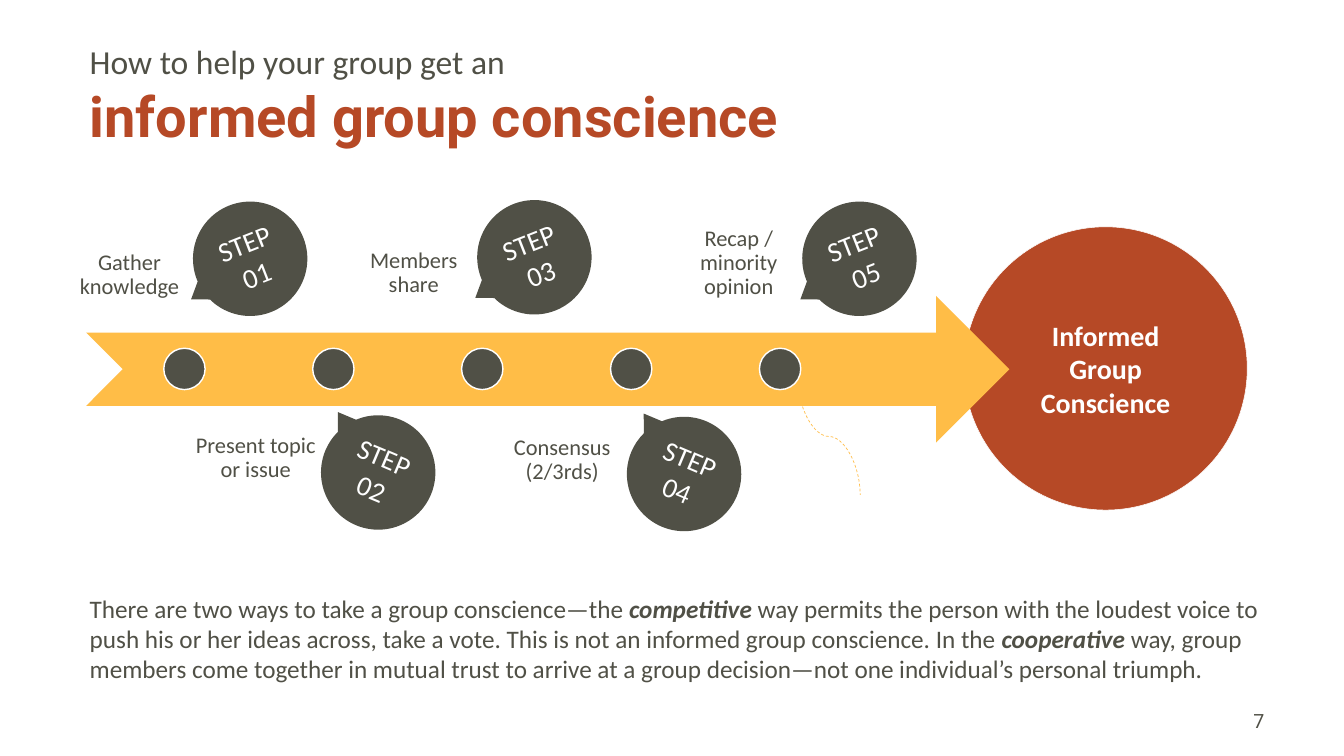
from pptx import Presentation
from pptx.dml.color import RGBColor
from pptx.enum.dml import MSO_LINE
from pptx.enum.shapes import MSO_CONNECTOR, MSO_SHAPE
from pptx.enum.text import MSO_ANCHOR, MSO_AUTO_SIZE, PP_ALIGN
from pptx.oxml.ns import qn
from pptx.util import Inches, Pt
from lxml import etree

OVAL, ARROW = MSO_SHAPE.OVAL, MSO_SHAPE.NOTCHED_RIGHT_ARROW
CALLOUT, CURVE = MSO_SHAPE.OVAL_CALLOUT, MSO_CONNECTOR.CURVE
TOP, MIDDLE, BOTTOM = MSO_ANCHOR.TOP, MSO_ANCHOR.MIDDLE, MSO_ANCHOR.BOTTOM
LEFT, CENTER, RIGHT = PP_ALIGN.LEFT, PP_ALIGN.CENTER, PP_ALIGN.RIGHT
NO_FIT, DASH = MSO_AUTO_SIZE.NONE, MSO_LINE.DASH

COLORS = {"rust": "B64926", "amber": "FFBD47", "olive": "505046", "white": "FFFFFF"}

STEPS = [
    ("STEP 01", ["Gather", "knowledge"], (3.83, 4), (1.1, 4.49)),
    ("STEP 02", ["Present topic", "or issue"], (6.37, 8.24), (2.5, 8.31)),
    ("STEP 03", ["Members", "share"], (9.47, 3.97), (6.74, 4.46)),
    ("STEP 04", ["Consensus", "(2/3rds)"], (12.44, 8.27), (8.58, 8.34)),
    ("STEP 05", ["Recap / minority", "opinion"], (15.92, 4), (13.19, 4.49)),
]

EXPLANATION = [
    ("There are two ways to take a group conscience—the ", False),
    ("competitive", True),
    (" way permits the person with the loudest voice to push his or her ideas across, "
     "take a vote. This is not an informed group conscience. In the ", False),
    ("cooperative", True),
    (" way, group members come together in mutual trust to arrive at a group "
     "decision—not one individual’s personal triumph.", False),
]


def rgb(name):
    """Return the named palette colour."""
    return RGBColor.from_string(COLORS[name])


def set_frame(shape, anchor, align, inset=(0.1, 0.05)):
    """Prepare a text frame and return its first paragraph."""
    frame = shape.text_frame
    frame.auto_size, frame.word_wrap = NO_FIT, True
    frame.vertical_anchor = anchor
    frame.margin_left = frame.margin_right = Inches(inset[0])
    frame.margin_top = frame.margin_bottom = Inches(inset[1])
    paragraph = frame.paragraphs[0]
    paragraph.alignment = align
    return paragraph


def add_run(paragraph, text, size, color, font="Calibri", bold=False, italic=False):
    """Append one formatted run."""
    run = paragraph.add_run()
    run.text = text
    run.font.name, run.font.size = font, Pt(size)
    run.font.bold, run.font.italic = bold, italic
    run.font.color.rgb = rgb(color)


def add_lines(paragraph, lines, size, color, bold=False):
    """Append runs separated by line breaks."""
    for index, line in enumerate(lines):
        if index:
            paragraph.add_line_break()
        add_run(paragraph, line, size, color, bold=bold)


def place(placeholder, left, top, width, height):
    """Move and size a placeholder."""
    placeholder.left, placeholder.top = Inches(left), Inches(top)
    placeholder.width, placeholder.height = Inches(width), Inches(height)


def add_solid(slide, kind, box, color, outline=0):
    """Add a flat filled shape with an optional white outline."""
    shape = slide.shapes.add_shape(kind, *map(Inches, box))
    shape.shadow.inherit = False
    shape.fill.solid()
    shape.fill.fore_color.rgb = rgb(color)
    if outline:
        shape.line.color.rgb = rgb("white")
        shape.line.width = Pt(outline)
    else:
        shape.line.fill.background()
    return shape


def add_title(slide):
    """Fill the two-line title."""
    title = slide.shapes.title
    place(title, 1.68, 0.76, 23.66, 2.26)
    paragraph = set_frame(title, TOP, LEFT)
    add_run(paragraph, "How to help your group get an", 48, "olive")
    paragraph.add_line_break()
    add_run(paragraph, "informed group conscience", 80, "rust", "Roboto", bold=True)


def add_explanation(slide):
    """Fill the body with the unbulleted explanation."""
    body = slide.placeholders[1]
    place(body, 1.68, 11.72, 23.39, 1.92)
    paragraph = set_frame(body, TOP, LEFT)
    properties = paragraph._p.get_or_add_pPr()
    properties.set("marL", "0")
    properties.set("indent", "0")
    etree.SubElement(properties, qn("a:buNone"))
    paragraph.space_before = Pt(0)
    for text, stressed in EXPLANATION:
        add_run(paragraph, text, 36, "olive", bold=stressed, italic=stressed)


def add_goal(slide):
    """Add the goal circle at the end of the timeline."""
    goal = add_solid(slide, OVAL, (19.13, 4.5, 5.62, 5.62), "rust", 0.75)
    paragraph = set_frame(goal, MIDDLE, CENTER)
    add_lines(paragraph, ["Informed", "Group", "Conscience"], 40, "white", bold=True)


def add_step(slide, name, label_lines, callout_at, label_at, above):
    """Add a step callout and its label above or below the arrow."""
    width, height, anchor = (2.94, 1.76, BOTTOM) if above else (5.15, 1.77, TOP)
    label = slide.shapes.add_textbox(*map(Inches, (*label_at, width, height)))
    paragraph = set_frame(label, anchor, CENTER, (0.31, 0.31))
    paragraph.line_spacing = 0.9
    add_lines(paragraph, label_lines, 32, "olive")

    callout = add_solid(slide, CALLOUT, (*callout_at, 2.27, 2.27), "olive")
    callout.rotation = 338.5 if above else 22.8
    tail = (-0.61, 0.14) if above else (-0.53, -0.35)
    callout.adjustments[0], callout.adjustments[1] = tail
    add_run(set_frame(callout, MIDDLE, CENTER), name, 40, "white")


def add_curve(slide):
    """Add the dashed curve leaving the last milestone."""
    curve = slide.shapes.add_connector(CURVE, *map(Inches, (17.61, 8.04, 15.29, 9.28)))
    properties = curve._element.spPr
    properties.find(qn("a:xfrm")).set("rot", str(270 * 60000))
    curve.line.color.rgb = rgb("amber")
    curve.line.width = Pt(1)
    curve.line.dash_style = DASH
    etree.SubElement(properties, qn("a:effectLst"))


def add_page_number(slide):
    """Add the page number at the lower right."""
    number = slide.shapes.add_textbox(*map(Inches, (19.11, 13.9, 6.22, 0.8)))
    add_run(set_frame(number, MIDDLE, RIGHT, (0.24, 0.12)), "7", 28, "olive", "Roboto")


def main():
    """Build the group conscience timeline slide."""
    deck = Presentation()
    deck.slide_width, deck.slide_height = Inches(26.67), Inches(15)
    slide = deck.slides.add_slide(deck.slide_layouts[1])
    add_title(slide)
    add_explanation(slide)
    add_goal(slide)
    timeline = add_solid(slide, ARROW, (1.71, 5.87, 18.32, 2.91), "amber")
    timeline.adjustments[0] = timeline.adjustments[1] = 0.5
    add_curve(slide)
    for index, step in enumerate(STEPS):
        add_solid(slide, OVAL, (3.25 + 2.955 * index, 6.91, 0.82, 0.82), "olive", 2)
        add_step(slide, *step, above=index % 2 == 0)
    add_page_number(slide)
    deck.save("out.pptx")


if __name__ == "__main__":
    main()
